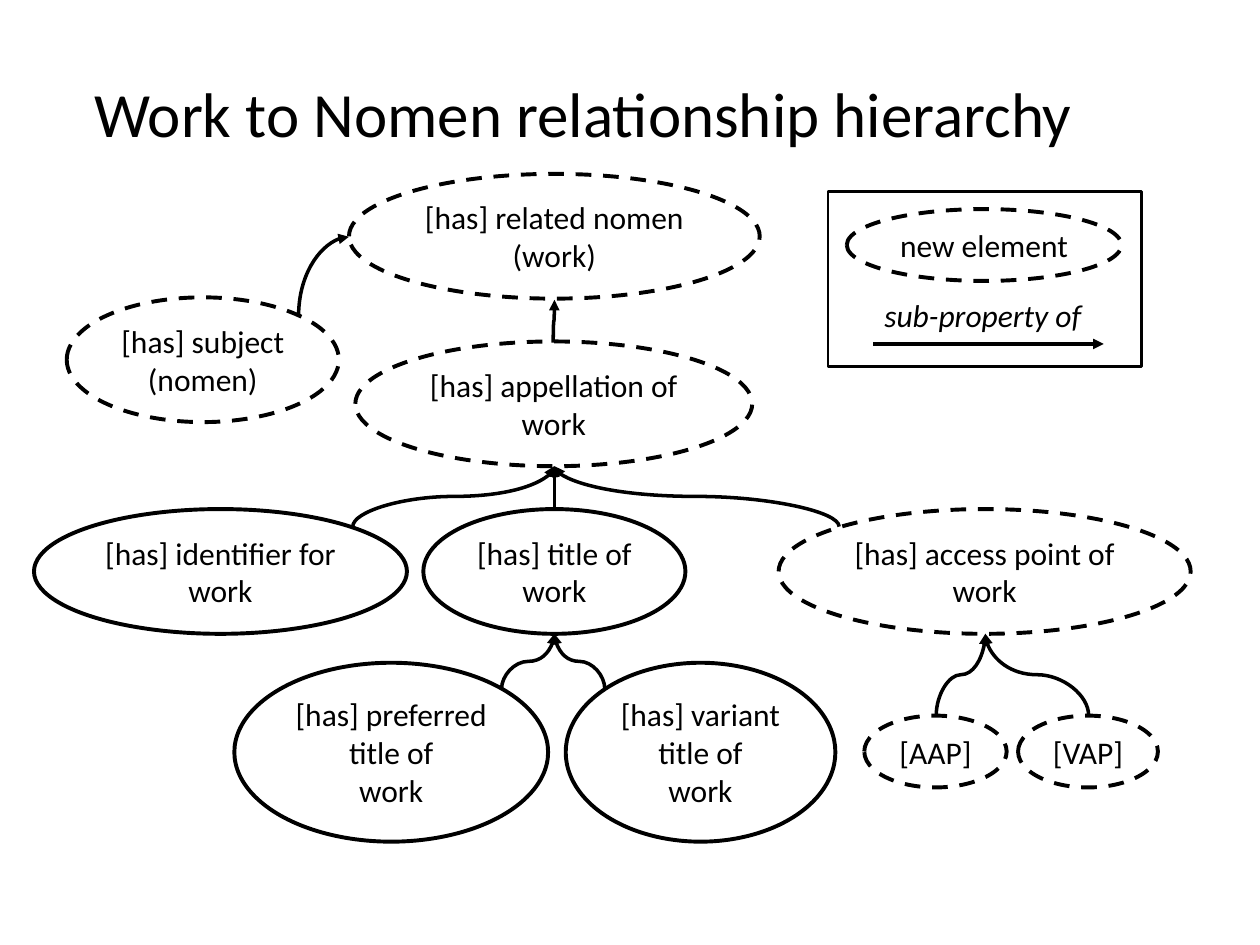
from lxml import etree
from pptx import Presentation
from pptx.dml.color import RGBColor
from pptx.enum import dml, shapes, text
from pptx.oxml.ns import qn
from pptx.util import Inches, Pt

COLORS = {"ink": "000000", "background": "FFFFFF"}
INK = RGBColor.from_string(COLORS["ink"])

presentation = Presentation()
presentation.slide_width = Inches(10)
presentation.slide_height = Inches(7.5)
slide = presentation.slides.add_slide(presentation.slide_layouts[5])
slide.background.fill.solid()
slide.background.fill.fore_color.rgb = RGBColor.from_string(COLORS["background"])


def write(shape, lines, size=18, align=text.PP_ALIGN.CENTER, italic=None):
    """Fill a shape with one unwrapped paragraph per line."""
    frame = shape.text_frame
    frame.word_wrap = False
    frame.auto_size = text.MSO_AUTO_SIZE.NONE
    frame.vertical_anchor = text.MSO_ANCHOR.MIDDLE
    for index, line in enumerate(lines):
        paragraph = frame.add_paragraph() if index else frame.paragraphs[0]
        paragraph.alignment = align
        run = paragraph.add_run()
        run.text = line
        run.font.name = "Calibri"
        run.font.size = Pt(size)
        run.font.italic = italic
        run.font.color.rgb = INK


def add_arrow(kind, x1, y1, x2, y2):
    """Add a black connector with a triangle at its end."""
    arrow = slide.shapes.add_connector(
        kind, Inches(x1), Inches(y1), Inches(x2), Inches(y2))
    arrow.line.color.rgb = INK
    arrow.line.width = Pt(2)
    properties = arrow.line._get_or_add_ln()
    etree.SubElement(properties, qn("a:tailEnd"), type="triangle")
    etree.SubElement(arrow._element.spPr, qn("a:effectLst"))
    return arrow


# Title
title = slide.shapes.title
title.left, title.top = Inches(0.65), Inches(0.54)
title.width, title.height = Inches(8.22), Inches(0.71)
write(title, ["Work to Nomen relationship hierarchy"], 36, text.PP_ALIGN.LEFT)

# Legend frame
legend = slide.shapes.add_shape(
    shapes.MSO_SHAPE.RECTANGLE, Inches(6.57), Inches(1.52), Inches(2.49), Inches(1.39))
legend.shadow.inherit = False
legend.fill.background()
legend.line.color.rgb = INK
legend.line.width = Pt(1.5)

# Elements: left, top, width, height, dashed (new element), lines
elements = [
    (2.77, 1.38, 3.26, 0.99, True, ["[has] related nomen", "(work)"]),
    (0.53, 2.36, 2.16, 0.99, True, ["[has] subject", "(nomen)"]),
    (2.82, 2.71, 3.15, 0.99, True, ["[has] appellation of", "work"]),
    (0.27, 4.04, 2.96, 0.99, False, ["[has] identifier for", "work"]),
    (3.36, 4.04, 2.08, 0.99, False, ["[has] title of", "work"]),
    (6.18, 4.04, 3.27, 0.99, True, ["[has] access point of", "work"]),
    (1.86, 5.26, 2.49, 1.42, False, ["[has] preferred", "title of", "work"]),
    (4.49, 5.26, 2.14, 1.42, False, ["[has] variant", "title of", "work"]),
    (6.86, 5.68, 1.13, 0.57, True, ["[AAP]"]),
    (8.08, 5.68, 1.11, 0.57, True, ["[VAP]"]),
    (6.72, 1.66, 2.18, 0.57, True, ["new element"]),
]
for left, top, width, height, dashed, lines in elements:
    ellipse = slide.shapes.add_shape(
        shapes.MSO_SHAPE.OVAL, Inches(left), Inches(top), Inches(width), Inches(height))
    ellipse.shadow.inherit = False
    ellipse.fill.background()
    ellipse.line.color.rgb = INK
    ellipse.line.width = Pt(2.25)
    if dashed:
        ellipse.line.dash_style = dml.MSO_LINE.DASH
    write(ellipse, lines)

# Curved arrows, each leaving its element upwards
curves = [
    (2.37, 2.51, 2.77, 1.88, "curvedConnector2"),
    (4.39, 2.72, 4.40, 2.38, "curvedConnector3"),
    (2.80, 4.18, 4.40, 3.70, "curvedConnector3"),
    (6.66, 4.18, 4.40, 3.70, "curvedConnector3"),
    (3.98, 5.47, 4.40, 5.03, "curvedConnector3"),
    (4.80, 5.47, 4.40, 5.03, "curvedConnector3"),
    (7.43, 5.68, 7.82, 5.03, "curvedConnector3"),
    (8.64, 5.68, 7.82, 5.03, "curvedConnector3"),
]
for x1, y1, x2, y2, preset in curves:
    # A quarter turn swaps width and height around the same centre
    length, spread = y1 - y2, abs(x2 - x1)
    left, top = (x1 + x2 - length) / 2, (y1 + y2 - spread) / 2
    curve = add_arrow(shapes.MSO_CONNECTOR.CURVE, left, top, left + length, top + spread)
    frame = curve._element.spPr.find(qn("a:xfrm"))
    to_right = x2 > x1
    frame.set("rot", str((90 if to_right else 270) * 60000))
    frame.set("flipH", "1" if to_right else "0")
    frame.set("flipV", "1")
    curve._element.spPr.find(qn("a:prstGeom")).set("prst", preset)

# Straight arrows: title to appellation, and the legend sample
for ends in [(4.4, 4.04, 4.4, 3.7), (6.93, 2.73, 8.76, 2.73)]:
    add_arrow(shapes.MSO_CONNECTOR.STRAIGHT, *ends)

# Legend label
label = slide.shapes.add_textbox(Inches(6.92), Inches(2.3), Inches(1.81), Inches(0.4))
write(label, ["sub-property of"], align=text.PP_ALIGN.LEFT, italic=True)

presentation.save("out.pptx")
